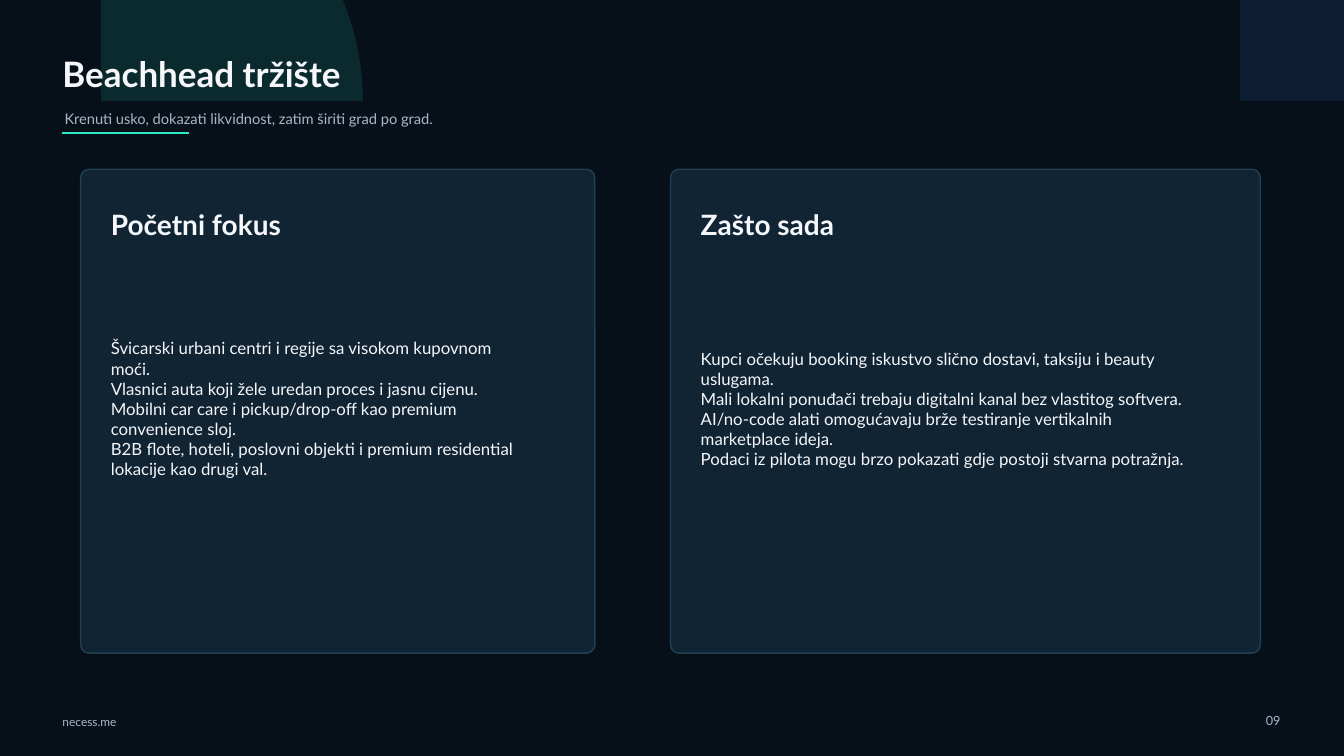
from pptx import Presentation
from pptx.dml.color import RGBColor
from pptx.enum.shapes import MSO_CONNECTOR, MSO_SHAPE
from pptx.enum.text import MSO_ANCHOR, PP_ALIGN
from pptx.oxml.ns import qn
from pptx.util import Emu, Pt
from lxml.etree import SubElement

PX = 9144
FONT = "Lato"
COLORS = {
    "night": "071018",
    "teal": "2EE8C8",
    "blue": "3B82F6",
    "white": "F5F7FA",
    "muted": "A9B7C6",
    "card": "102434",
    "border": "25475C",
}
CARD_TOP, CARD_HEIGHT, CARD_PADDING = 168, 480, 30
FOCUS_POINTS = [
    "Švicarski urbani centri i regije sa visokom kupovnom moći.",
    "Vlasnici auta koji žele uredan proces i jasnu cijenu.",
    "Mobilni car care i pickup/drop-off kao premium convenience sloj.",
    "B2B flote, hoteli, poslovni objekti i premium residential lokacije kao drugi val.",
]
TIMING_POINTS = [
    "Kupci očekuju booking iskustvo slično dostavi, taksiju i beauty uslugama.",
    "Mali lokalni ponuđači trebaju digitalni kanal bez vlastitog softvera.",
    "AI/no-code alati omogućavaju brže testiranje vertikalnih marketplace ideja.",
    "Podaci iz pilota mogu brzo pokazati gdje postoji stvarna potražnja.",
]


def px(*lengths):
    """Turn px lengths into EMU."""
    return [Emu(length * PX) for length in lengths]


def paint(fill, color, opacity=100):
    """Apply a solid colour with an opacity in percent."""
    fill.solid()
    fill.fore_color.rgb = RGBColor.from_string(COLORS[color])
    if opacity < 100:
        solid = fill._xPr.find(qn("a:solidFill"))
        SubElement(solid[0], qn("a:alpha"), val=str(opacity * 1000))


def add_glow(slide, left, top, diameter, color):
    """Add a translucent quarter disc."""
    glow = slide.shapes.add_shape(MSO_SHAPE.ARC, *px(left, top, diameter, diameter))
    glow.shadow.inherit = False
    paint(glow.fill, color, 12)
    glow.line.fill.background()


def add_label(slide, box, text, size, color="white", bold=False, align=PP_ALIGN.LEFT):
    """Add vertically centred text without margins."""
    frame = slide.shapes.add_textbox(*px(*box)).text_frame
    frame.word_wrap = True
    frame.vertical_anchor = MSO_ANCHOR.MIDDLE
    frame.margin_left = frame.margin_top = frame.margin_right = frame.margin_bottom = 0
    frame.text = text
    for paragraph in frame.paragraphs:
        paragraph.alignment = align
        for run in paragraph.runs:
            run.font.name = FONT
            run.font.size = Pt(size)
            run.font.bold = bold
            run.font.color.rgb = RGBColor.from_string(COLORS[color])


def add_underline(slide, left, right, y):
    """Add the accent line below the heading."""
    underline = slide.shapes.add_connector(MSO_CONNECTOR.STRAIGHT, *px(left, y, right, y))
    paint(underline.line.fill, "teal")
    underline.line.width = Pt(2)
    SubElement(underline._element.spPr, qn("a:effectLst"))


def add_card(slide, left, width, body_width, heading, points):
    """Add a rounded card with a heading and its points."""
    card = slide.shapes.add_shape(
        MSO_SHAPE.ROUNDED_RECTANGLE, *px(left, CARD_TOP, width, CARD_HEIGHT))
    card.adjustments[0] = 0.017
    card.shadow.inherit = False
    paint(card.fill, "card")
    paint(card.line.fill, "border", 85)
    card.line.width = Pt(1)
    text_left = left + CARD_PADDING
    add_label(slide, (text_left, CARD_TOP + 37, 300, 35), heading, 20, bold=True)
    add_label(slide, (text_left, CARD_TOP + 100, body_width, 275), "\n".join(points), 12)


def main():
    """Build and save the slide."""
    deck = Presentation()
    deck.slide_width, deck.slide_height = px(1333, 750)
    slide = deck.slides.add_slide(deck.slide_layouts[6])
    paint(slide.background.fill, "night")

    add_glow(slide, -160, -160, 520, "teal")
    add_glow(slide, 950, -180, 560, "blue")

    add_label(slide, (62, 45, 840, 55), "Beachhead tržište", 25, bold=True)
    add_label(slide, (64, 100, 860, 36),
              "Krenuti usko, dokazati likvidnost, zatim širiti grad po grad.", 10.5, "muted")
    add_underline(slide, 62, 187, 132)

    add_label(slide, (62, 705, 140, 22), "necess.me", 8.5, "muted")
    add_label(slide, (1225, 702, 45, 25), "09", 9, "muted", align=PP_ALIGN.RIGHT)

    add_card(slide, 80, 510, 420, "Početni fokus", FOCUS_POINTS)
    add_card(slide, 665, 585, 485, "Zašto sada", TIMING_POINTS)

    deck.save("out.pptx")


if __name__ == "__main__":
    main()
